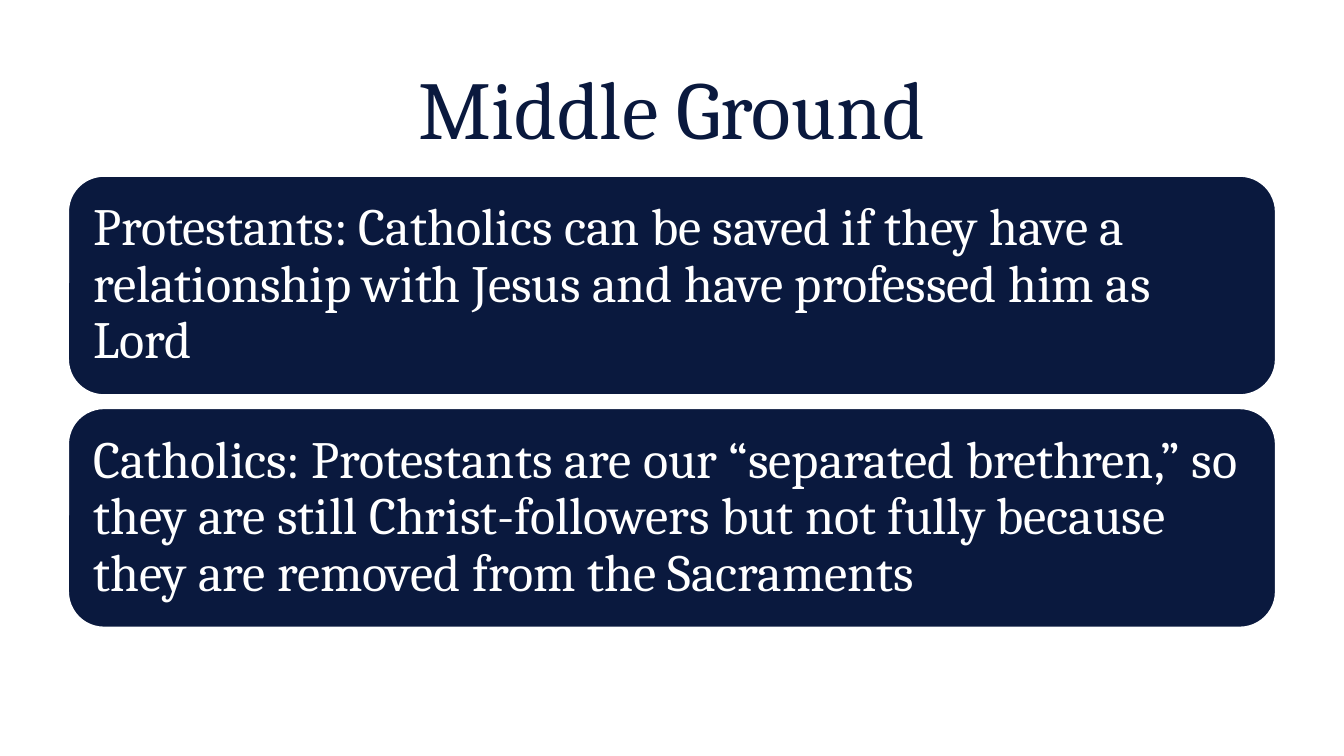
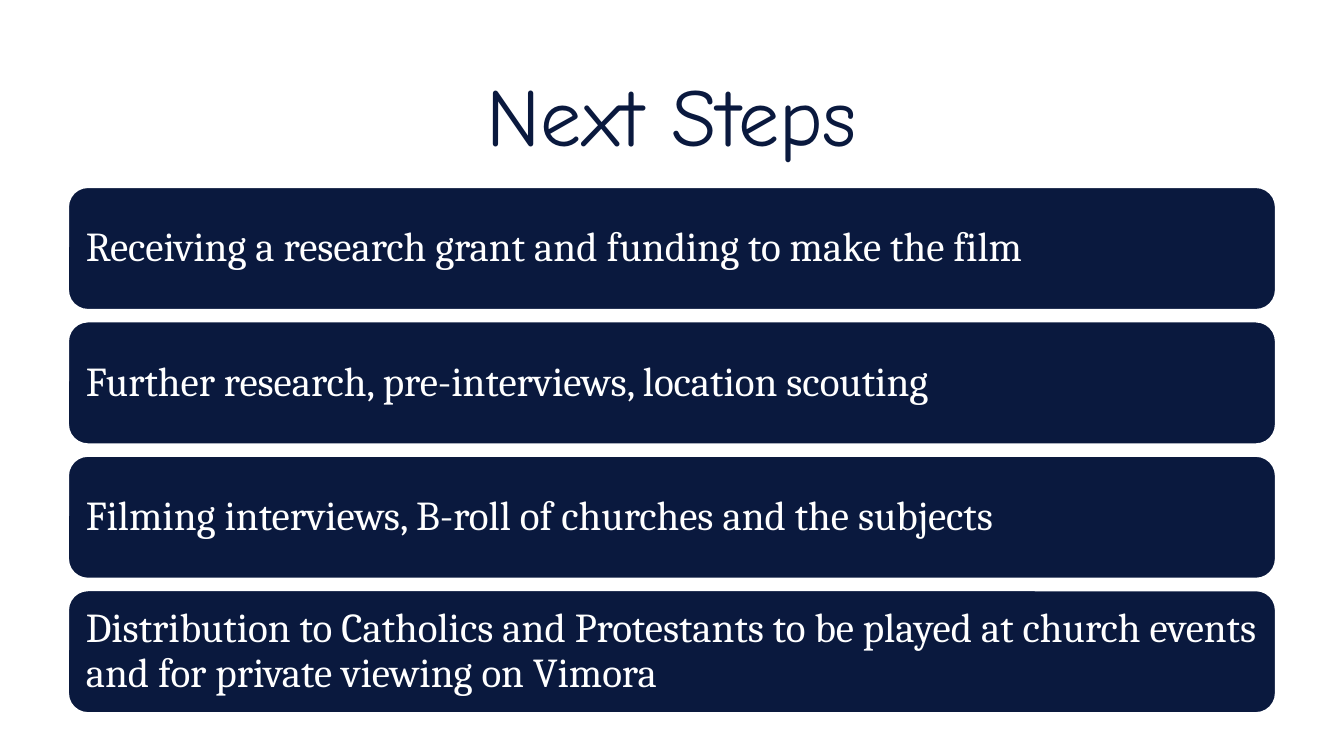
from dataclasses import dataclass

from pptx import Presentation
from pptx.dml.color import RGBColor
from pptx.enum.shapes import MSO_SHAPE
from pptx.enum.text import MSO_ANCHOR, PP_ALIGN
from pptx.slide import Slide
from pptx.text.text import TextFrame
from pptx.util import Emu, Pt

PX = 9525  # 96 px to the inch


def px(n: int) -> Emu:
    return Emu(n * PX)


@dataclass(frozen=True)
class Theme:
    navy: RGBColor = RGBColor(0x0A, 0x19, 0x3E)
    white: RGBColor = RGBColor(0xFF, 0xFF, 0xFF)
    body_font: str = "Cambria"
    title_size: int = 44
    outline: int = 2
    left: int = 48
    width: int = 864
    title_height: int = 90


@dataclass(frozen=True)
class CardSlide:
    title: str
    title_font: str
    title_top: int
    first_top: int
    card_height: int
    pitch: int
    inset: int
    text_size: int
    cards: tuple[str, ...]


THEME = Theme()

SLIDES = (
    CardSlide(
        "Middle Ground", "Cambria", title_top=31,
        first_top=125, card_height=158, pitch=166, inset=11, text_size=28,
        cards=(
            "Protestants: Catholics can be saved if they have a relationship "
            "with Jesus and have professed him as Lord",
            "Catholics: Protestants are our “separated brethren,” so they are "
            "still Christ-followers but not fully because they are removed "
            "from the Sacraments",
        ),
    ),
    CardSlide(
        "Next Steps", "Comic Neue", title_top=36,
        first_top=133, card_height=89, pitch=96, inset=9, text_size=22,
        cards=(
            "Receiving a research grant and funding to make the film",
            "Further research, pre-interviews, location scouting",
            "Filming interviews, B-roll of churches and the subjects",
            "Distribution to Catholics and Protestants to be played at church "
            "events and for private viewing on Vimora",
        ),
    ),
)


def write(tf: TextFrame, text: str, font: str, size: int,
          color: RGBColor, align: PP_ALIGN) -> None:
    tf.text = text
    tf.word_wrap = True
    tf.vertical_anchor = MSO_ANCHOR.MIDDLE
    p = tf.paragraphs[0]
    p.alignment = align
    for r in p.runs:
        r.font.name = font
        r.font.size = Pt(size)
        r.font.color.rgb = color


def add_title(s: Slide, content: CardSlide) -> None:
    sp = s.shapes.title
    sp.left, sp.top = px(THEME.left), px(content.title_top)
    sp.width, sp.height = px(THEME.width), px(THEME.title_height)
    write(sp.text_frame, content.title, content.title_font,
          THEME.title_size, THEME.navy, PP_ALIGN.CENTER)


def add_card(s: Slide, content: CardSlide, index: int) -> None:
    top = content.first_top + index * content.pitch
    sp = s.shapes.add_shape(
        MSO_SHAPE.ROUNDED_RECTANGLE, px(THEME.left), px(top),
        px(THEME.width), px(content.card_height))
    sp.shadow.inherit = False
    sp.fill.solid()
    sp.fill.fore_color.rgb = THEME.navy
    sp.line.color.rgb = THEME.white
    sp.line.width = Pt(THEME.outline)

    tf = sp.text_frame
    tf.margin_left = tf.margin_right = px(content.inset)
    tf.margin_top = tf.margin_bottom = px(content.inset)
    write(tf, content.cards[index], THEME.body_font,
          content.text_size, THEME.white, PP_ALIGN.LEFT)
    tf.paragraphs[0].line_spacing = 0.9


def main() -> None:
    prs = Presentation()
    prs.slide_width, prs.slide_height = px(960), px(540)
    title_only = prs.slide_layouts.get_by_name("Title Only")

    for content in SLIDES:
        s = prs.slides.add_slide(title_only)
        s.background.fill.solid()
        s.background.fill.fore_color.rgb = THEME.white
        add_title(s, content)
        for index in range(len(content.cards)):
            add_card(s, content, index)

    prs.save("out.pptx")


if __name__ == "__main__":
    main()
